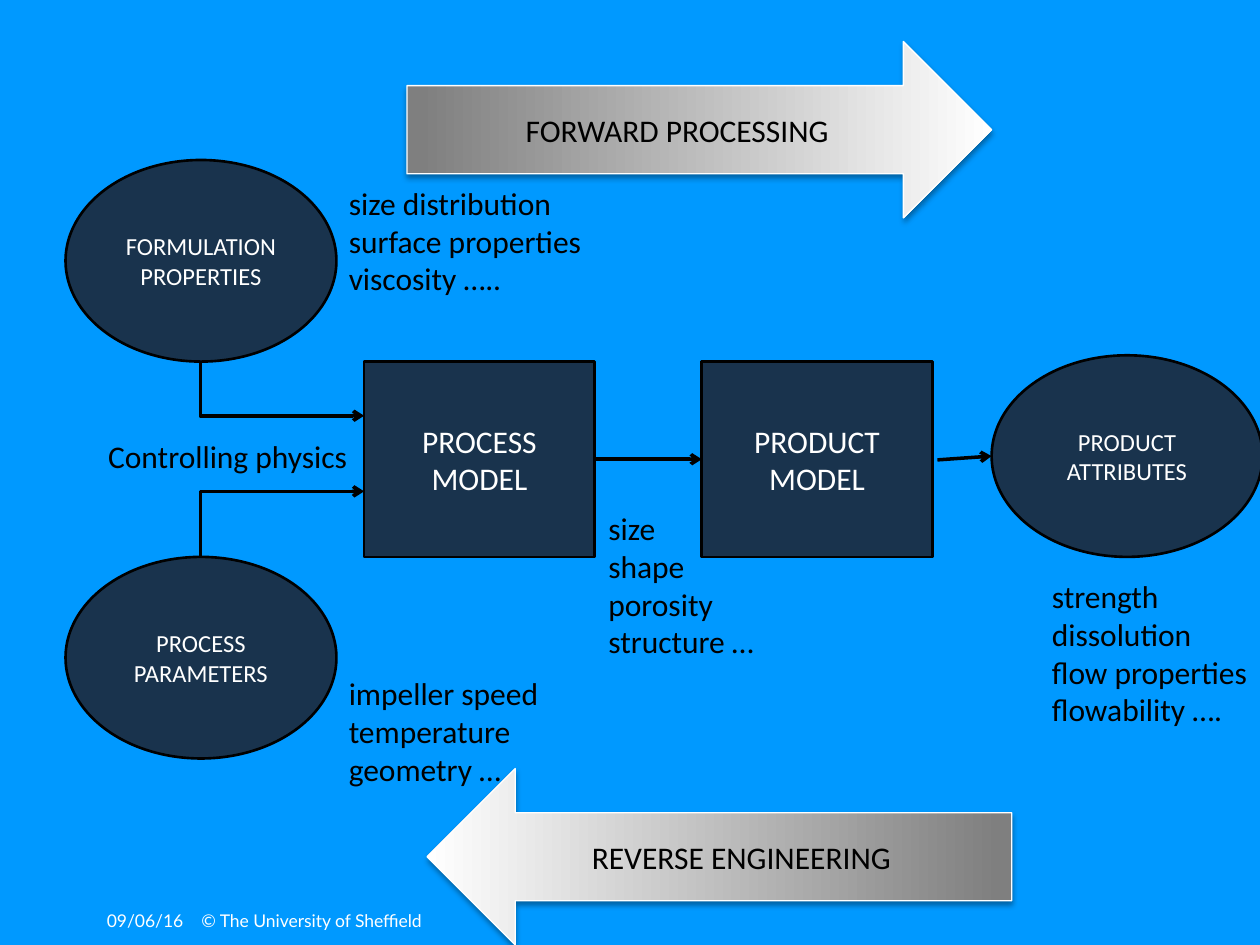
"""Draw a process flow from formulation properties to product attributes."""
import dataclasses

import lxml.etree
import pptx
import pptx.dml.color
import pptx.enum.shapes
import pptx.enum.text
import pptx.oxml.ns
import pptx.util

Inches = pptx.util.Inches
Pt = pptx.util.Pt
Shape = pptx.enum.shapes.MSO_SHAPE
Link = pptx.enum.shapes.MSO_CONNECTOR
qn = pptx.oxml.ns.qn


@dataclasses.dataclass
class Theme:
    back: str = "0099FF"
    node: str = "19334D"
    dark: str = "000000"
    light: str = "FFFFFF"
    grey: str = "7F7F7F"
    font: str = "Calibri"
    foot: str = "Lato"
    large: int = 18
    mid: int = 14
    small: int = 10
    edge: float = 1.5
    wire: float = 2
    thin: float = 0.75


def rgb(code):
    return pptx.dml.color.RGBColor.from_string(code)


class Board:
    def __init__(self, slide, theme):
        self.slide = slide
        self.theme = theme
        slide.background.fill.solid()
        slide.background.fill.fore_color.rgb = rgb(theme.back)

    def label(self, frame, text, size, color, font, align=None):
        frame.text = text
        for line in frame.paragraphs:
            line.alignment = align
            line.font.size = Pt(size)
            line.font.name = font
            line.font.color.rgb = rgb(color)

    def shape(self, kind, x, y, w, h, text, size, color, edge, width):
        item = self.slide.shapes.add_shape(
            kind, Inches(x), Inches(y), Inches(w), Inches(h))
        item.shadow.inherit = False
        item.line.color.rgb = rgb(edge)
        item.line.width = Pt(width)
        frame = item.text_frame
        frame.word_wrap = True
        frame.vertical_anchor = pptx.enum.text.MSO_ANCHOR.MIDDLE
        self.label(frame, text, size, color, self.theme.font,
                   pptx.enum.text.PP_ALIGN.CENTER)
        return item

    def node(self, kind, x, y, w, h, text, size):
        t = self.theme
        item = self.shape(kind, x, y, w, h, text, size, t.light, t.dark, t.edge)
        item.fill.solid()
        item.fill.fore_color.rgb = rgb(t.node)
        return item

    def oval(self, x, y, text):
        return self.node(Shape.OVAL, x, y, 2.15, 1.6, text, self.theme.mid)

    def box(self, x, text):
        return self.node(Shape.RECTANGLE, x, 2.87, 1.83, 1.55, text,
                         self.theme.large)

    def banner(self, x, y, text, flip=False):
        t = self.theme
        item = self.shape(Shape.RIGHT_ARROW, x, y, 4.64, 1.4, text,
                          t.large, t.dark, t.light, t.thin)
        item.fill.gradient()
        item.fill.gradient_angle = 0
        for stop, place, color in zip(item.fill.gradient_stops,
                                      (0.02, 1), (t.grey, t.light)):
            stop.position = place
            stop.color.rgb = rgb(color)
        props = item.element.spPr
        if flip:
            props.find(qn("a:xfrm")).set("flipH", "1")
        shade = lxml.etree.SubElement(
            props.find(qn("a:effectLst")), qn("a:outerShdw"),
            blurRad=str(Pt(3.1)), dist=str(Pt(1.8)), dir="5400000",
            rotWithShape="0")
        tone = lxml.etree.SubElement(shade, qn("a:srgbClr"), val=t.dark)
        lxml.etree.SubElement(tone, qn("a:alpha"), val="35000")

    def wire(self, kind, x1, y1, x2, y2):
        item = self.slide.shapes.add_connector(
            kind, Inches(x1), Inches(y1), Inches(x2), Inches(y2))
        item.line.color.rgb = rgb(self.theme.dark)
        item.line.width = Pt(self.theme.wire)
        props = item.element.spPr
        lxml.etree.SubElement(props.find(qn("a:ln")), qn("a:tailEnd"),
                              type="arrow")
        lxml.etree.SubElement(props, qn("a:effectLst"))
        return item

    def bend(self, x1, y1, x2, y2):
        w, h = abs(y2 - y1), x2 - x1
        left, top = (x1 + x2 - w) / 2, (y1 + y2 - h) / 2
        item = self.wire(Link.ELBOW, left, top, left + w, top + h)
        props = item.element.spPr
        props.find(qn("a:prstGeom")).set("prst", "bentConnector2")
        frame = props.find(qn("a:xfrm"))
        rises = y2 < y1
        frame.set("rot", "5400000" if rises else "16200000")
        frame.set("flipH", "1")
        frame.set("flipV", "1" if rises else "0")

    def join(self, first, last):
        item = self.wire(Link.STRAIGHT, 0, 0, 1, 1)
        item.begin_connect(first, 3)
        item.end_connect(last, 1)

    def text(self, x, y, w, h):
        return self.slide.shapes.add_textbox(
            Inches(x), Inches(y), Inches(w), Inches(h)).text_frame

    def note(self, x, y, w, h, text):
        t = self.theme
        frame = self.text(x, y, w, h)
        frame.word_wrap = False
        frame.auto_size = pptx.enum.text.MSO_AUTO_SIZE.SHAPE_TO_FIT_TEXT
        self.label(frame, text, t.large, t.dark, t.font)

    def foot(self, x, w, text):
        t = self.theme
        frame = self.text(x, 7.17, w, 0.33)
        frame.word_wrap = True
        self.label(frame, text, t.small, t.light, t.foot)


def main():
    deck = pptx.Presentation()
    deck.slide_width, deck.slide_height = Inches(10), Inches(7.5)
    board = Board(deck.slides.add_slide(deck.slide_layouts[6]), Theme())

    board.foot(0.75, 1, "09/06/16")
    board.foot(1.5, 5.67, "© The University of Sheffield")

    board.oval(0.52, 1.27, "FORMULATION PROPERTIES")
    board.oval(0.52, 4.42, "PROCESS PARAMETERS")
    process = board.box(2.89, "PROCESS MODEL")
    product = board.box(5.57, "PRODUCT MODEL")
    board.oval(7.87, 2.82, "PRODUCT ATTRIBUTES")

    board.bend(1.59, 2.87, 2.89, 3.3)
    board.bend(1.59, 4.42, 2.89, 3.9)
    board.join(process, product)
    board.wire(Link.STRAIGHT, 7.44, 3.65, 7.87, 3.62)

    board.note(8.25, 4.53, 1.77, 1.31,
               "strength\ndissolution\nflow properties\nflowability ….")
    board.note(4.73, 3.99, 1.37, 1.31, "size\nshape\nporosity\nstructure …")
    board.note(2.67, 1.41, 2.07, 1.01,
               "size distribution\nsurface properties\nviscosity …..")
    board.note(2.67, 5.3, 1.73, 1.01,
               "impeller speed\ntemperature\ngeometry …")
    board.note(0.76, 3.42, 2.14, 0.4, "Controlling physics")

    board.banner(3.23, 0.33, "FORWARD PROCESSING")
    board.banner(3.39, 6.1, "REVERSE ENGINEERING", flip=True)
    deck.save("out.pptx")


if __name__ == "__main__":
    main()
